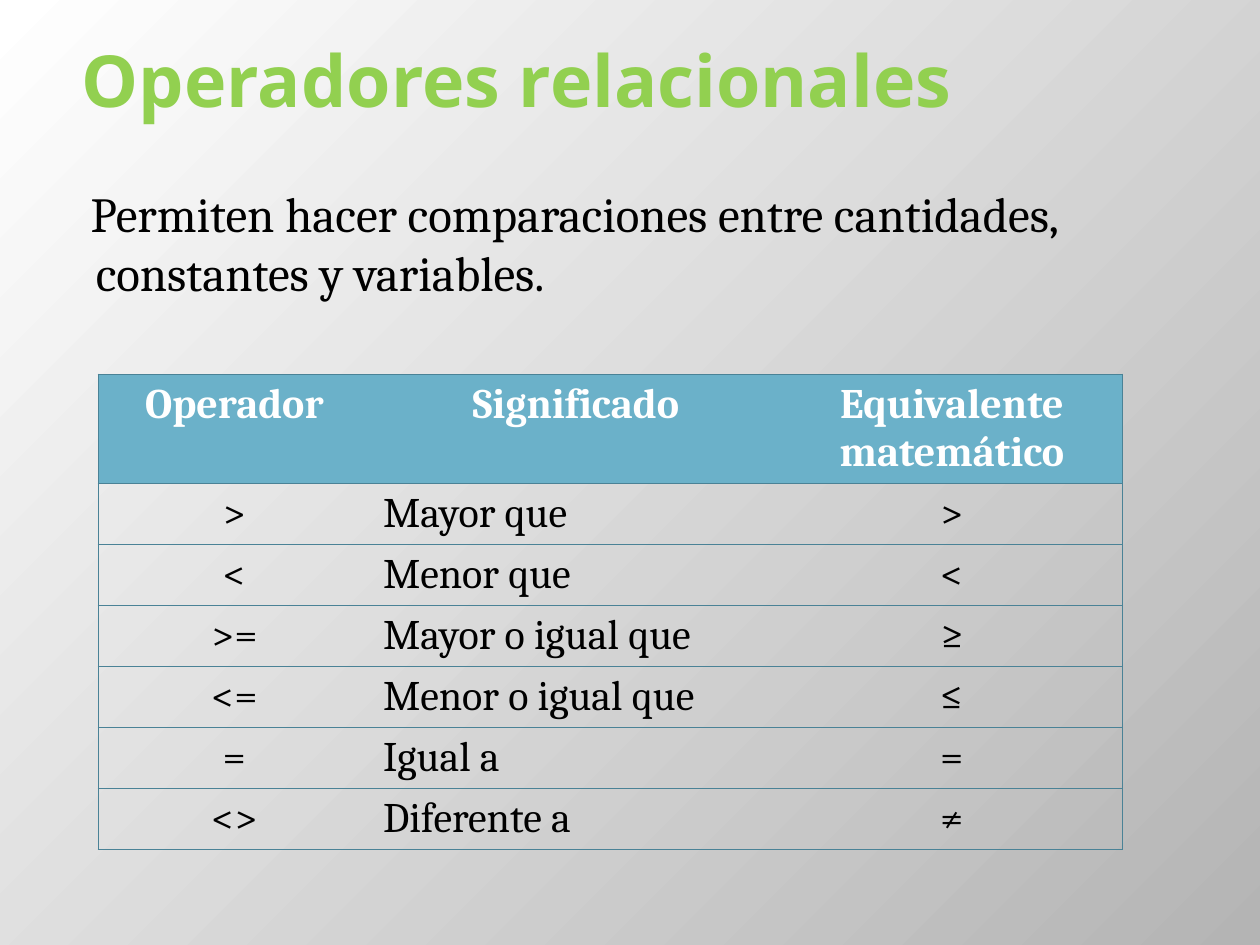
from lxml.etree import SubElement
from pptx import Presentation
from pptx.dml.color import RGBColor
from pptx.enum.text import MSO_ANCHOR, MSO_AUTO_SIZE, PP_ALIGN
from pptx.oxml import parse_xml
from pptx.oxml.ns import nsdecls, qn
from pptx.util import Inches, Pt

TITLE = "Operadores relacionales"
INTRO = "Permiten hacer comparaciones entre cantidades, constantes y variables."
HEADER = ("Operador", "Significado", "Equivalente matemático")
OPERATORS = [
    (">", "Mayor que", ">"),
    ("<", "Menor que", "<"),
    (">=", "Mayor o igual que", "≥"),
    ("<=", "Menor o igual que", "≤"),
    ("=", "Igual a", "="),
    ("<>", "Diferente a", "≠"),
]

THEME = {
    "title_font": "Noto Sans", "text_font": "Cambria",
    "title_size": 41, "intro_size": 28, "table_size": 24,
    "title": "92D050", "text": "000000",
    "header_text": "FFFFFF", "header_fill": "6BB1C9",
    "border": "4A8296", "border_width": 0.75,
    "light": "FFFFFF", "dark": "B4B4B4",
}
TITLE_BOX = (0.55, 0, 9, 1.25)
INTRO_BOX = (0.47, 1.41, 9, 1.09)
TABLE_ORIGIN = (0.78, 2.97)
COLUMN_WIDTHS = (2.16, 3.26, 2.71)
HEADER_HEIGHT, ROW_HEIGHT = 0.82, 0.48


def paint_background(page):
    page.background.fill.solid()
    properties = page._element.cSld.find(qn("p:bg")).find(qn("p:bgPr"))
    gradient = parse_xml(
        f'<a:gradFill {nsdecls("a")} rotWithShape="1"><a:gsLst>'
        f'<a:gs pos="0"><a:srgbClr val="{THEME["light"]}"/></a:gs>'
        f'<a:gs pos="100000"><a:srgbClr val="{THEME["dark"]}"/></a:gs>'
        '</a:gsLst><a:path path="circle">'
        '<a:fillToRect r="100000" b="100000"/></a:path></a:gradFill>')
    properties.replace(properties[0], gradient)


def write(frame, text, font, size, color, bold=False, align=PP_ALIGN.LEFT):
    para = frame.paragraphs[0]
    para.alignment = align
    span = para.add_run()
    span.text = text
    span.font.name = font
    span.font.size = Pt(size)
    span.font.bold = bold
    span.font.color.rgb = RGBColor.from_string(color)
    return para


def place(box, bounds, anchor):
    box.left, box.top, box.width, box.height = map(Inches, bounds)
    frame = box.text_frame
    frame.word_wrap = True
    frame.auto_size = MSO_AUTO_SIZE.NONE
    frame.vertical_anchor = anchor
    return frame


def set_borders(cell, visible):
    properties = cell._tc.get_or_add_tcPr()
    for position, side in enumerate(("lnL", "lnR", "lnT", "lnB")):
        line = parse_xml(f'<a:{side} {nsdecls("a")} w="{Pt(THEME["border_width"])}"/>')
        if side in visible:
            fill = SubElement(line, qn("a:solidFill"))
            SubElement(fill, qn("a:srgbClr"), val=THEME["border"])
        else:
            SubElement(line, qn("a:noFill"))
        properties.insert(position, line)


def add_operator_table(page):
    rows = [HEADER, *OPERATORS]
    height = HEADER_HEIGHT + ROW_HEIGHT * len(OPERATORS)
    bounds = map(Inches, (*TABLE_ORIGIN, sum(COLUMN_WIDTHS), height))
    table = page.shapes.add_table(len(rows), len(HEADER), *bounds).table
    table.horz_banding = False
    for column, width in zip(table.columns, COLUMN_WIDTHS):
        column.width = Inches(width)
    for r, values in enumerate(rows):
        is_header = r == 0
        table.rows[r].height = Inches(HEADER_HEIGHT if is_header else ROW_HEIGHT)
        for c, value in enumerate(values):
            cell = table.cell(r, c)
            if is_header:
                cell.fill.solid()
                cell.fill.fore_color.rgb = RGBColor.from_string(THEME["header_fill"])
            else:
                cell.fill.background()
            visible = {"lnT", "lnB"}
            if c == 0:
                visible.add("lnL")
            if c == len(HEADER) - 1:
                visible.add("lnR")
            set_borders(cell, visible)
            centred = is_header or c != 1
            write(cell.text_frame, value, THEME["text_font"], THEME["table_size"],
                  THEME["header_text" if is_header else "text"], is_header,
                  PP_ALIGN.CENTER if centred else PP_ALIGN.LEFT)


def main():
    deck = Presentation()
    deck.slide_width, deck.slide_height = Inches(10), Inches(7.5)
    page = deck.slides.add_slide(deck.slide_layouts[1])
    paint_background(page)

    title = place(page.shapes.title, TITLE_BOX, MSO_ANCHOR.MIDDLE)
    write(title, TITLE, THEME["title_font"], THEME["title_size"], THEME["title"], True)

    intro = place(page.placeholders[1], INTRO_BOX, MSO_ANCHOR.TOP)
    para = write(intro, INTRO, THEME["text_font"], THEME["intro_size"], THEME["text"])
    para.space_before = Pt(5.6)
    properties = para._p.get_or_add_pPr()
    properties.set("marL", str(Inches(0.19)))
    properties.set("indent", str(Inches(-0.04)))
    SubElement(properties, qn("a:buNone"))

    add_operator_table(page)
    deck.save("out.pptx")


if __name__ == "__main__":
    main()
